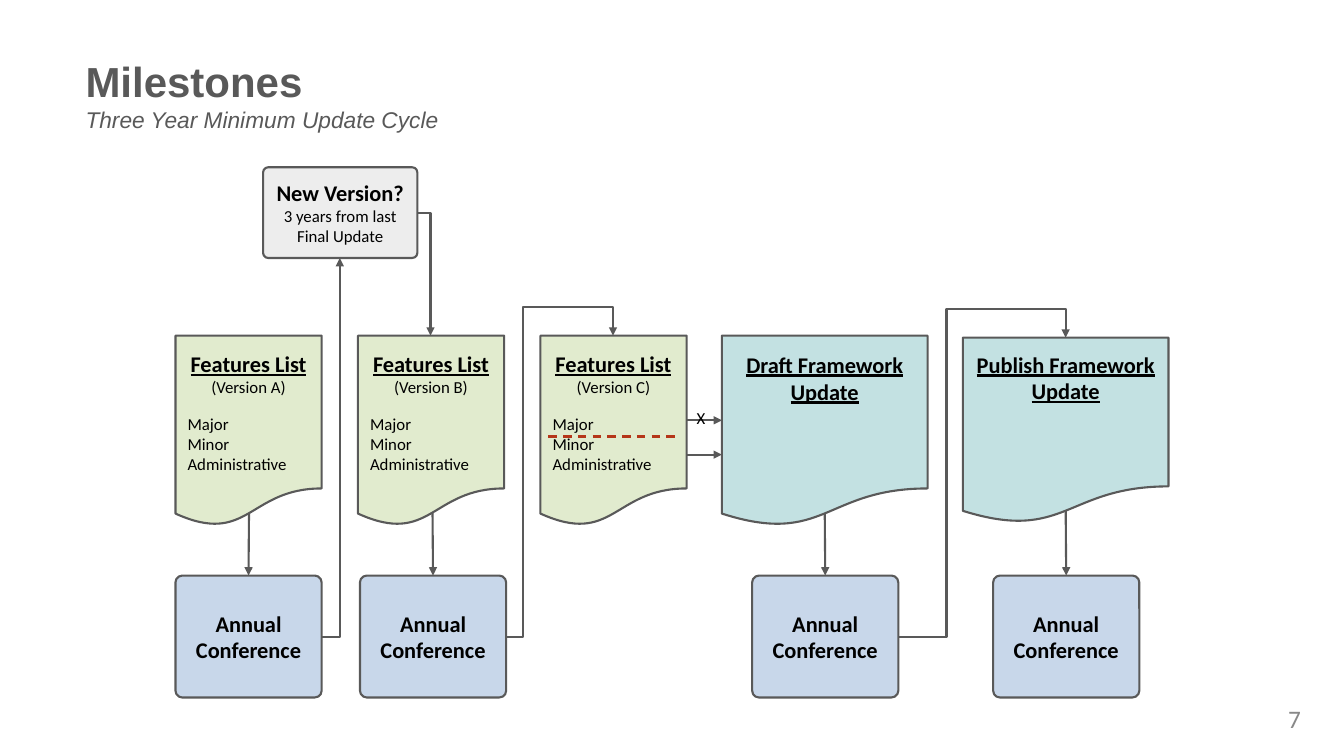
from dataclasses import dataclass
from typing import Any, NamedTuple

from lxml import etree
from pptx import Presentation
from pptx.dml.color import RGBColor
from pptx.enum.dml import MSO_LINE
from pptx.enum.shapes import MSO_CONNECTOR, MSO_SHAPE
from pptx.enum.text import MSO_ANCHOR, PP_ALIGN
from pptx.oxml.ns import qn
from pptx.util import Emu, Pt

DOCUMENT, ROUNDED = MSO_SHAPE.FLOWCHART_DOCUMENT, MSO_SHAPE.ROUNDED_RECTANGLE
STRAIGHT, ELBOW = MSO_CONNECTOR.STRAIGHT, MSO_CONNECTOR.ELBOW
LEFT, CENTER, RIGHT = PP_ALIGN.LEFT, PP_ALIGN.CENTER, PP_ALIGN.RIGHT
TOP, MIDDLE = MSO_ANCHOR.TOP, MSO_ANCHOR.MIDDLE
DASH = MSO_LINE.DASH
EMU_PER_PX = 9144
TOP_SITE = 0


@dataclass(frozen=True)
class Theme:
    heading_font: str = "Arial"
    body_font: str = "Calibri"
    gray: str = "595959"
    page_gray: str = "888888"
    black: str = "000000"
    red: str = "C00000"
    green: tuple[str, int] = ("9BBB59", 29)
    blue: tuple[str, int] = ("4F81BD", 31)
    teal: tuple[str, int] = ("339A9C", 29)
    silver: tuple[str, int] = ("BFBFBF", 28)
    title_size: float = 30
    subtitle_size: float = 16.2
    page_size: float = 18
    heading_size: float = 16
    body_size: float = 12
    line_width: float = 1.5


THEME = Theme()


class TextLine(NamedTuple):
    text: str
    font: dict[str, Any]
    alignment: Any = CENTER
    space_before: float = 0
    indent: int = 0


class Box(NamedTuple):
    kind: Any
    left: int
    top: int
    width: int
    height: int
    fill: tuple[str, int]
    lines: list[TextLine]
    anchor: Any = MIDDLE
    margin_top: int = 5


class Arrow(NamedTuple):
    start: tuple[int, int]
    end: tuple[int, int]
    target: Any = None


class Bend(NamedTuple):
    start: tuple[int, int]
    end: tuple[int, int]
    preset: str
    adjustments: tuple[int, ...] = ()


def px(length: int) -> Emu:
    return Emu(length * EMU_PER_PX)


def font_format(size: float, color: str = THEME.black, name: str = THEME.body_font, **extra: Any) -> dict[str, Any]:
    return {"size": Pt(size), "name": name, "color": color, **extra}


HEADING = font_format(THEME.heading_size, bold=True)
UNDERLINED = {**HEADING, "underline": True}
BODY = font_format(THEME.body_size)


def style_font(font: Any, formats: dict[str, Any]) -> None:
    for key, value in formats.items():
        if key == "color":
            font.color.rgb = RGBColor.from_string(value)
        else:
            setattr(font, key, value)


def write_lines(frame: Any, lines: list[TextLine]) -> None:
    for index, line in enumerate(lines):
        paragraph = frame.paragraphs[0] if index == 0 else frame.add_paragraph()
        paragraph.alignment = line.alignment
        if line.indent:
            paragraph._p.get_or_add_pPr().set("marL", str(px(line.indent)))
        if line.space_before:
            paragraph.space_before = Pt(line.space_before)
        run = paragraph.add_run()
        run.text = line.text
        style_font(run.font, line.font)


def style_line(line: Any, color: str = THEME.gray) -> None:
    line.color.rgb = RGBColor.from_string(color)
    line.width = Pt(THEME.line_width)


def add_box(slide: Any, box: Box) -> Any:
    shape = slide.shapes.add_shape(box.kind, px(box.left), px(box.top), px(box.width), px(box.height))
    shape.shadow.inherit = False
    if box.kind == ROUNDED:
        shape.adjustments[0] = 0.056
    color, opacity = box.fill
    shape.fill.solid()
    shape.fill.fore_color.rgb = RGBColor.from_string(color)
    color_element = shape._element.spPr.find(f"{qn('a:solidFill')}/{qn('a:srgbClr')}")
    etree.SubElement(color_element, qn("a:alpha"), val=str(opacity * 1000))
    style_line(shape.line)
    frame = shape.text_frame
    settings = {"word_wrap": True, "vertical_anchor": box.anchor, "margin_top": px(box.margin_top)}
    settings |= {f"margin_{side}": px(5) for side in ("left", "right", "bottom")}
    for key, value in settings.items():
        setattr(frame, key, value)
    write_lines(frame, box.lines)
    return shape


def add_line(slide: Any, kind: Any, start: tuple[int, int], end: tuple[int, int], color: str = THEME.gray,
             arrow: bool = True) -> Any:
    connector = slide.shapes.add_connector(kind, *map(px, start + end))
    style_line(connector.line, color)
    if arrow:
        etree.SubElement(connector.line._get_or_add_ln(), qn("a:tailEnd"), type="triangle")
    etree.SubElement(connector._element.spPr, qn("a:effectLst"))
    return connector


def add_arrow(slide: Any, arrow: Arrow) -> None:
    connector = add_line(slide, STRAIGHT, arrow.start, arrow.end)
    if arrow.target is not None:
        connector.end_connect(arrow.target, TOP_SITE)


def add_bend(slide: Any, bend: Bend) -> None:
    connector = add_line(slide, ELBOW, bend.start, bend.end)
    geometry = connector._element.spPr.find(qn("a:prstGeom"))
    geometry.set("prst", bend.preset)
    guides = geometry.find(qn("a:avLst"))
    for number, value in enumerate(bend.adjustments, 1):
        etree.SubElement(guides, qn("a:gd"), name=f"adj{number}", fmla=f"val {value}")


def add_text(slide: Any, left: int, top: int, width: int, height: int, lines: list[TextLine]) -> Any:
    frame = slide.shapes.add_textbox(px(left), px(top), px(width), px(height)).text_frame
    frame.word_wrap = True
    write_lines(frame, lines)
    return frame


def features_box(version: str, left: int) -> Box:
    lines = [TextLine("Features List", UNDERLINED), TextLine(f"(Version {version})", BODY)]
    lines += [TextLine(level, BODY, LEFT, gap, 7)
              for level, gap in (("Major", 12), ("Minor", 0), ("Administrative", 0))]
    return Box(DOCUMENT, left, 333, 145, 189, THEME.green, lines)


def framework_box(stage: str, left: int, top: int, height: int, margin_top: int) -> Box:
    lines = [TextLine(f"{stage} Framework Update", UNDERLINED)]
    return Box(DOCUMENT, left, top, 204, height, THEME.teal, lines, TOP, margin_top)


def conference_box(left: int) -> Box:
    return Box(ROUNDED, left, 571, 145, 121, THEME.blue, [TextLine("Annual Conference", HEADING)])


def add_title(slide: Any) -> None:
    title = font_format(THEME.title_size, THEME.gray, THEME.heading_font, bold=True)
    subtitle = font_format(THEME.subtitle_size, THEME.gray, THEME.heading_font, italic=True)
    frame = add_text(slide, 75, 49, 925, 83, [TextLine("Milestones", title, LEFT)])
    frame.vertical_anchor = MIDDLE
    frame.margin_top = px(11)
    paragraph = frame.paragraphs[0]
    paragraph.add_line_break()
    run = paragraph.add_run()
    run.text = "Three Year Minimum Update Cycle"
    style_font(run.font, subtitle)


def main() -> None:
    presentation = Presentation()
    presentation.slide_width, presentation.slide_height = px(1333), px(750)
    slide = presentation.slides.add_slide(presentation.slide_layouts[6])
    add_title(slide)

    divider = add_line(slide, STRAIGHT, (544, 433), (669, 433), THEME.red, arrow=False)
    divider.line.dash_style = DASH

    for index, version in enumerate("ABC"):
        add_box(slide, features_box(version, 174 + 181 * index))
    add_box(slide, Box(ROUNDED, 261, 166, 153, 90, THEME.silver, [
        TextLine("New Version?", HEADING), TextLine("3 years from last Final Update", BODY)]))
    add_box(slide, framework_box("Draft", 716, 333, 189, 15))
    add_box(slide, framework_box("Publish", 955, 335, 184, 13))
    conferences = [add_box(slide, conference_box(left)) for left in (174, 357, 746, 985)]

    starts = ((247, 509), (429, 509), (818, 509), (1057, 507))
    arrows = [Arrow(start, (start[0], 571), target) for start, target in zip(starts, conferences)]
    arrows += [Arrow((681, y), (716, y)) for y in (417, 451)]
    for arrow in arrows:
        add_arrow(slide, arrow)
    for bend in (
        Bend((319, 632), (337, 256), "bentConnector2"),
        Bend((414, 211), (427, 333), "bentConnector2"),
        Bend((502, 632), (608, 333), "bentConnector4", (15600, 109500)),
        Bend((891, 632), (1057, 335), "bentConnector4", (28800, 109500)),
    ):
        add_bend(slide, bend)

    add_text(slide, 681, 400, 31, 34, [TextLine("X", BODY, LEFT)])
    page_font = font_format(THEME.page_size, THEME.page_gray)
    add_text(slide, 1253, 693, 47, 37, [TextLine("7", page_font, RIGHT)])
    presentation.save("out.pptx")


if __name__ == "__main__":
    main()
